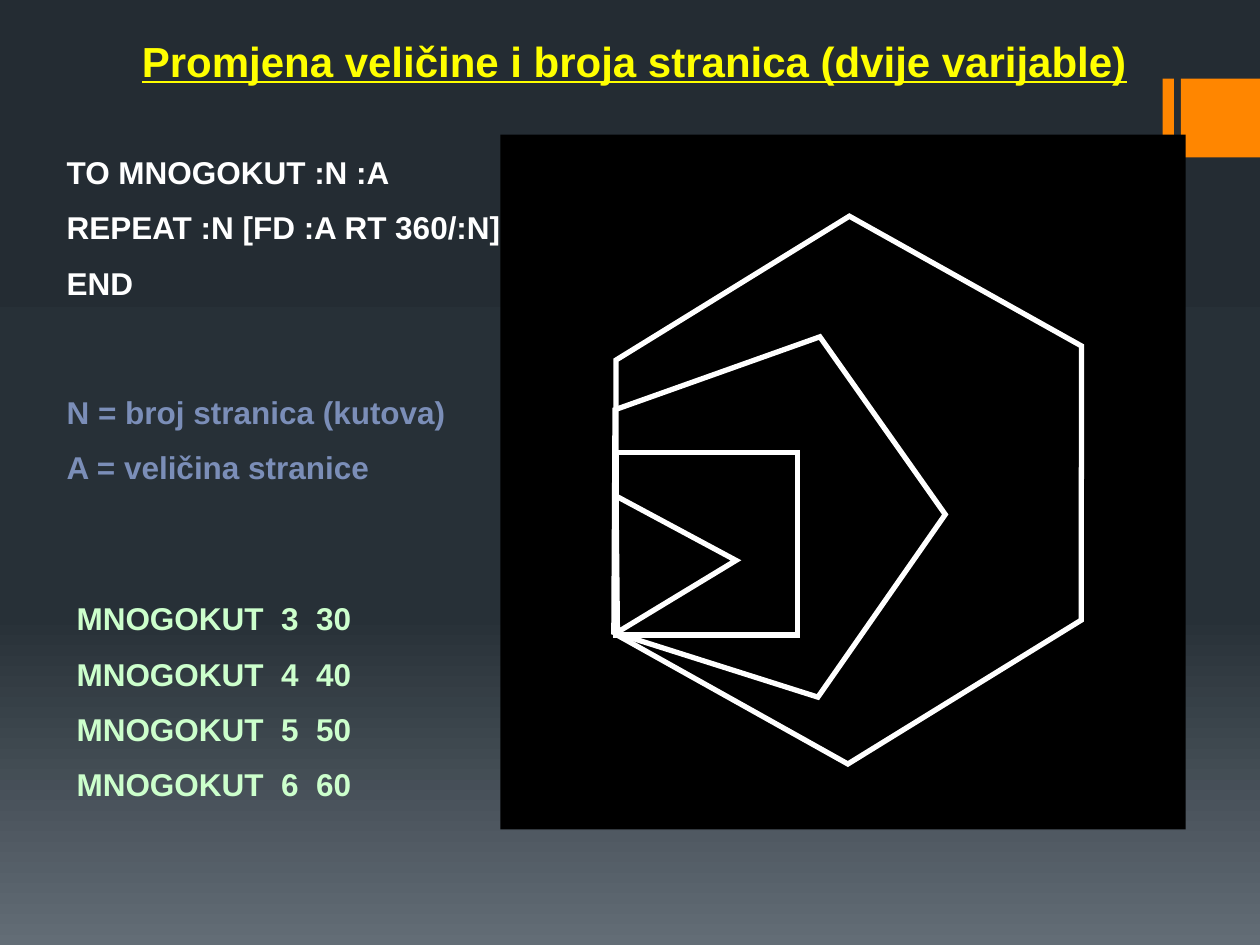
from copy import deepcopy

from lxml import etree
from pptx import Presentation
from pptx.dml.color import RGBColor
from pptx.enum.shapes import MSO_SHAPE
from pptx.enum.text import MSO_ANCHOR, MSO_AUTO_SIZE, PP_ALIGN
from pptx.oxml.ns import qn
from pptx.util import Pt

RECTANGLE = MSO_SHAPE.RECTANGLE
HEXAGON = MSO_SHAPE.HEXAGON
PENTAGON = MSO_SHAPE.REGULAR_PENTAGON
TRIANGLE = MSO_SHAPE.ISOSCELES_TRIANGLE
TOP = MSO_ANCHOR.TOP
FIXED = MSO_AUTO_SIZE.NONE
LEFT = PP_ALIGN.LEFT
CENTER = PP_ALIGN.CENTER

NIGHT = RGBColor(0x24, 0x2C, 0x33)
SLATE = RGBColor(0x27, 0x30, 0x37)
STEEL = RGBColor(0x63, 0x6D, 0x76)
ORANGE = RGBColor(0xFF, 0x86, 0x00)
BLACK = RGBColor(0x00, 0x00, 0x00)
WHITE = RGBColor(0xFF, 0xFF, 0xFF)
YELLOW = RGBColor(0xFF, 0xFF, 0x00)
BLUE = RGBColor(0x7B, 0x8E, 0xB8)
MINT = RGBColor(0xCC, 0xFF, 0xCC)


class SlideBuilder:
    font_name = "Arial"
    body_size = 18
    title_size = 24
    paragraph_gap = 10
    outline_width = 3

    def __init__(self, page):
        self.page = page

    def background(self, stops):
        fill = self.page.background.fill
        fill.gradient()
        fill.gradient_angle = 270
        stop_list = self.page.element.find(".//" + qn("a:gsLst"))
        stop_list.insert(1, deepcopy(stop_list[0]))
        for stop, (position, color) in zip(fill.gradient_stops, stops):
            stop.position = position
            stop.color.rgb = color

    def set_text(self, box, lines, color, size, align=LEFT, underline=None):
        frame = box.text_frame
        frame.word_wrap = True
        frame.auto_size = FIXED
        frame.vertical_anchor = TOP
        frame.text = "\n".join(lines)
        for index, para in enumerate(frame.paragraphs):
            para.alignment = align
            para.space_before = Pt(self.paragraph_gap if index else 0)
            font = para.font
            font.name = self.font_name
            font.size = Pt(size)
            font.bold = True
            font.underline = underline
            font.color.rgb = color

    def title(self, text, left, top, width, height):
        box = self.page.shapes.title
        box.left, box.top = Pt(left), Pt(top)
        box.width, box.height = Pt(width), Pt(height)
        self.set_text(box, [text], YELLOW, self.title_size, CENTER, True)

    def text(self, lines, color, left, top, width, height):
        box = self.page.shapes.add_textbox(Pt(left), Pt(top), Pt(width), Pt(height))
        self.set_text(box, lines, color, self.body_size)

    def shape(self, kind, left, top, width, height):
        shape = self.page.shapes.add_shape(kind, Pt(left), Pt(top), Pt(width), Pt(height))
        shape.shadow.inherit = False
        return shape

    def block(self, color, left, top, width, height):
        block = self.shape(RECTANGLE, left, top, width, height)
        block.fill.solid()
        block.fill.fore_color.rgb = color
        block.line.fill.background()

    def outline(self, kind, left, top, width, height, rotation=0, adjustments=()):
        polygon = self.shape(kind, left, top, width, height)
        polygon.rotation = rotation
        for index, value in enumerate(adjustments):
            polygon.adjustments[index] = value
        polygon.fill.background()
        polygon.line.color.rgb = WHITE
        polygon.line.width = Pt(self.outline_width)
        line = polygon.element.spPr.find(qn("a:ln"))
        etree.SubElement(line, qn("a:miter"), lim="800000")


def main():
    deck = Presentation()
    deck.slide_width, deck.slide_height = Pt(720), Pt(540)
    builder = SlideBuilder(deck.slides.add_slide(deck.slide_layouts[5]))

    builder.background([(0, NIGHT), (0.65, SLATE), (1, STEEL)])
    builder.block(ORANGE, 664.3, 45, 6.5, 45)
    builder.block(ORANGE, 674.8, 45, 45.2, 45)
    builder.block(BLACK, 286, 77, 391.5, 397)

    builder.title("Promjena veličine i broja stranica (dvije varijable)", 48, 16.5, 629, 36)
    builder.text(
        ["TO MNOGOKUT :N :A", "REPEAT :N [FD :A RT 360/:N]", "END"],
        WHITE, 31, 84, 266, 94,
    )
    builder.text(
        [f"MNOGOKUT  {sides}  {sides * 10}" for sides in range(3, 7)],
        MINT, 36.7, 339, 199, 127,
    )
    builder.text(
        ["N = broj stranica (kutova)", "A = veličina stranice"],
        BLUE, 31, 221, 233, 61,
    )

    builder.outline(HEXAGON, 332.6, 143.3, 304.6, 273.6, 29.2, (0.279, 1.155))
    builder.outline(PENTAGON, 339.8, 187.9, 198, 196.6, 17.6)
    builder.outline(RECTANGLE, 352, 258.5, 103.7, 104.4)
    builder.outline(TRIANGLE, 329.8, 278.6, 79.2, 67, 328.8)

    deck.save("out.pptx")


if __name__ == "__main__":
    main()
